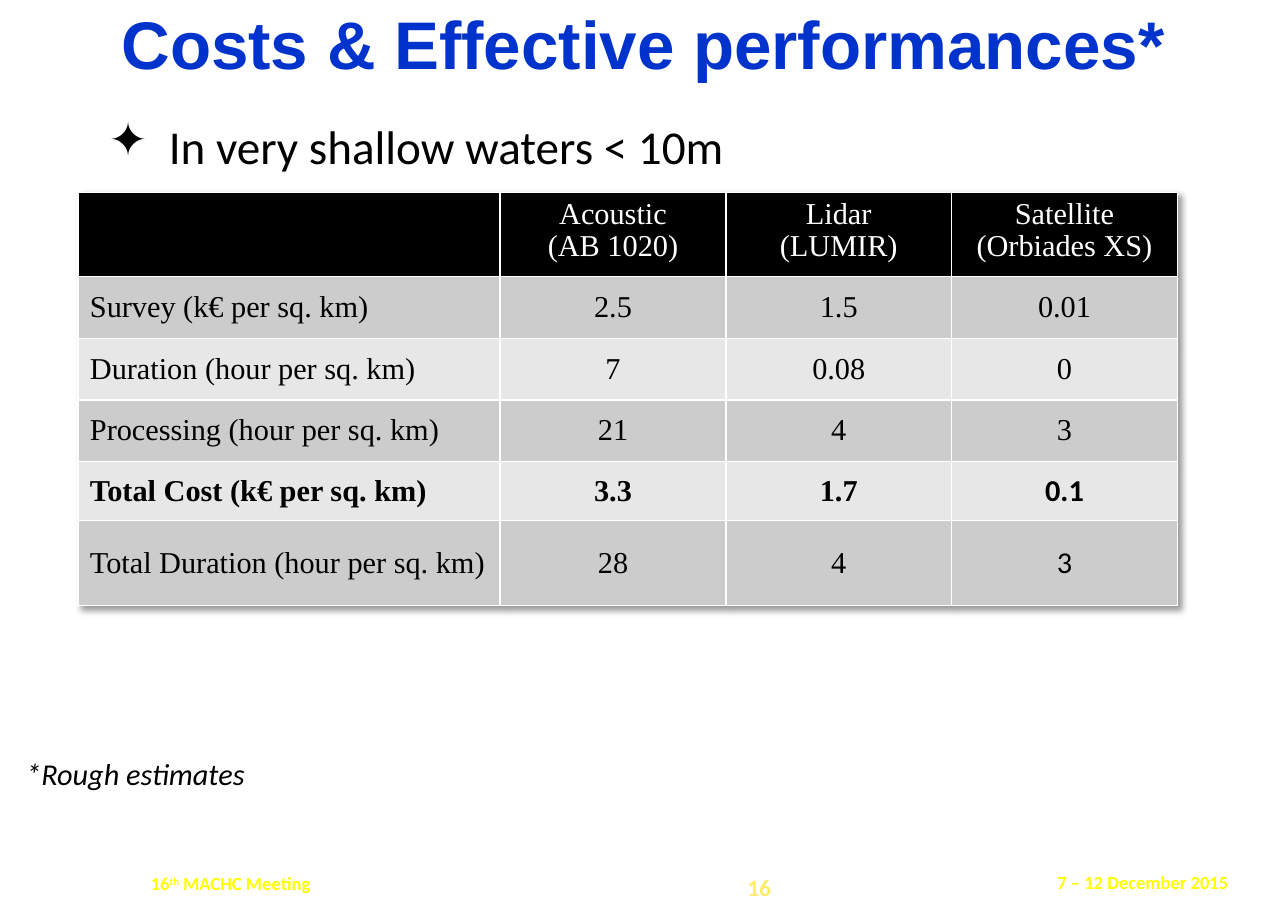
from lxml.etree import SubElement
from pptx import Presentation
from pptx.dml.color import RGBColor
from pptx.enum.text import MSO_ANCHOR, MSO_AUTO_SIZE, PP_ALIGN
from pptx.oxml import parse_xml
from pptx.oxml.ns import nsdecls, qn
from pptx.util import Cm, Pt

BLUE = RGBColor(0x00, 0x33, 0xCC)
BLACK = RGBColor(0x00, 0x00, 0x00)
WHITE = RGBColor(0xFF, 0xFF, 0xFF)
YELLOW = RGBColor(0xFF, 0xFF, 0x00)
PALE_YELLOW = RGBColor(0xFF, 0xED, 0x66)
DARK_BAND = RGBColor(0xCC, 0xCC, 0xCC)
LIGHT_BAND = RGBColor(0xE7, 0xE7, 0xE7)

COLUMN_WIDTHS = [8.85, 4.73, 4.73, 4.73]
ROW_HEIGHTS = [1.77, 1.29, 1.29, 1.29, 1.24, 1.78]
COST_ROWS = [
    ["", "Acoustic\n(AB 1020)", "Lidar\n(LUMIR)", "Satellite\n(Orbiades XS)"],
    ["Survey (k€ per sq. km)", "2.5", "1.5", "0.01"],
    ["Duration (hour per sq. km)", "7", "0.08", "0"],
    ["Processing (hour per sq. km)", "21", "4", "3"],
    ["Total Cost (k€ per sq. km)", "3.3", "1.7", "0.1"],
    ["Total Duration (hour per sq. km)", "28", "4", "3"],
]
TOTAL_COST_ROW = 4
SATELLITE_COLUMN = 3


def add_run(paragraph, text, size, color, name="Calibri", bold=False, italic=False):
    """Append a formatted run to a paragraph."""
    run = paragraph.add_run()
    run.text = text
    font = run.font
    font.size, font.name, font.bold, font.italic = Pt(size), name, bold, italic
    font.color.rgb = color
    return run


def add_text_box(slide, left, top, width, height, alignment=PP_ALIGN.LEFT):
    """Add a wrapping text box and return its first paragraph."""
    box = slide.shapes.add_textbox(Cm(left), Cm(top), Cm(width), Cm(height))
    box.text_frame.word_wrap = True
    paragraph = box.text_frame.paragraphs[0]
    paragraph.alignment = alignment
    return paragraph


def set_title(slide, text):
    """Place and format the title placeholder."""
    title = slide.shapes.title
    title.left, title.top, title.width, title.height = Cm(2.02), Cm(-0.08), Cm(22.91), Cm(3.18)
    frame = title.text_frame
    frame.auto_size = MSO_AUTO_SIZE.NONE
    frame.vertical_anchor = MSO_ANCHOR.TOP
    paragraph = frame.paragraphs[0]
    paragraph.alignment = PP_ALIGN.CENTER
    add_run(paragraph, text, 40, BLUE, "Arial", bold=True)


def add_bullet(slide, text):
    """Add the star-bulleted statement above the table."""
    paragraph = add_text_box(slide, 2.02, 2.33, 22.91, 12.07)
    properties = paragraph._p.get_or_add_pPr()
    properties.set("marL", str(Cm(1.27)))
    properties.set("indent", str(-Cm(1.27)))
    SubElement(properties, qn("a:buChar"), char="✦")
    add_run(paragraph, text, 28, BLACK)


def set_borders(cell):
    """Draw a thin white line on each side of a cell."""
    properties = cell._tc.get_or_add_tcPr()
    for position, side in enumerate(("lnL", "lnR", "lnT", "lnB")):
        properties.insert(position, parse_xml(
            f'<a:{side} {nsdecls("a")} w="{Pt(1)}"><a:solidFill>'
            f'<a:srgbClr val="{WHITE}"/></a:solidFill></a:{side}>'))


def fill_cell(cell, text, row, column):
    """Write and format one table cell according to its row and column."""
    header = row == 0
    cell.fill.solid()
    cell.fill.fore_color.rgb = BLACK if header else DARK_BAND if row % 2 else LIGHT_BAND
    set_borders(cell)
    cell.vertical_anchor = MSO_ANCHOR.TOP if header else MSO_ANCHOR.MIDDLE
    satellite_total = row >= TOTAL_COST_ROW and column == SATELLITE_COLUMN
    name = "Calibri" if satellite_total else "Times New Roman"
    frame = cell.text_frame
    for index, line in enumerate(text.split("\n") if text else []):
        paragraph = frame.add_paragraph() if index else frame.paragraphs[0]
        paragraph.alignment = PP_ALIGN.CENTER if column else PP_ALIGN.LEFT
        if header:
            paragraph.line_spacing = 0.97
        add_run(paragraph, line, 18, WHITE if header else BLACK, name,
                bold=row == TOTAL_COST_ROW)


def add_cost_table(slide):
    """Add the table comparing costs and durations, with its shadow."""
    table = slide.shapes.add_table(
        len(ROW_HEIGHTS), len(COLUMN_WIDTHS), Cm(1.63), Cm(4.03),
        Cm(sum(COLUMN_WIDTHS)), Cm(sum(ROW_HEIGHTS))).table
    for column, width in zip(table.columns, COLUMN_WIDTHS):
        column.width = Cm(width)
    for row, height in zip(table.rows, ROW_HEIGHTS):
        row.height = Cm(height)
    for row, texts in enumerate(COST_ROWS):
        for column, text in enumerate(texts):
            fill_cell(table.cell(row, column), text, row, column)
    table._tbl.tblPr.insert(0, parse_xml(
        f'<a:effectLst {nsdecls("a")}><a:outerShdw blurRad="{Pt(4)}" dist="{Pt(3)}" '
        f'dir="2700000" algn="tl" rotWithShape="0"><a:srgbClr val="{BLACK}">'
        '<a:alpha val="40000"/></a:srgbClr></a:outerShdw></a:effectLst>'))


def add_footer(slide):
    """Add the slide number, the meeting name and the date."""
    number = add_text_box(slide, 10.69, 18.17, 5.72, 0.64, PP_ALIGN.RIGHT)
    add_run(number, "16", 14, PALE_YELLOW, bold=True)
    meeting = add_text_box(slide, 1.51, 18.16, 6.65, 0.74, PP_ALIGN.CENTER)
    add_run(meeting, "16", 11, YELLOW, bold=True)
    ordinal = add_run(meeting, "th", 11, YELLOW, bold=True)
    ordinal._r.get_or_add_rPr().set("baseline", "30000")
    add_run(meeting, " MACHC Meeting", 11, YELLOW, bold=True)
    date = add_text_box(slide, 21.51, 18.13, 4.88, 0.74, PP_ALIGN.CENTER)
    add_run(date, "7 – 12 December 2015", 11, YELLOW, bold=True)


def main():
    """Build the slide and save it."""
    presentation = Presentation()
    presentation.slide_width, presentation.slide_height = Pt(765), Pt(540)
    slide = presentation.slides.add_slide(presentation.slide_layouts[5])
    set_title(slide, "Costs & Effective performances*")
    add_bullet(slide, "In very shallow waters < 10m")
    add_cost_table(slide)
    note = add_text_box(slide, 0.3, 15.7, 18.19, 1.02)
    add_run(note, "*Rough estimates", 18, BLACK, italic=True)
    add_footer(slide)
    presentation.save("out.pptx")


if __name__ == "__main__":
    main()
